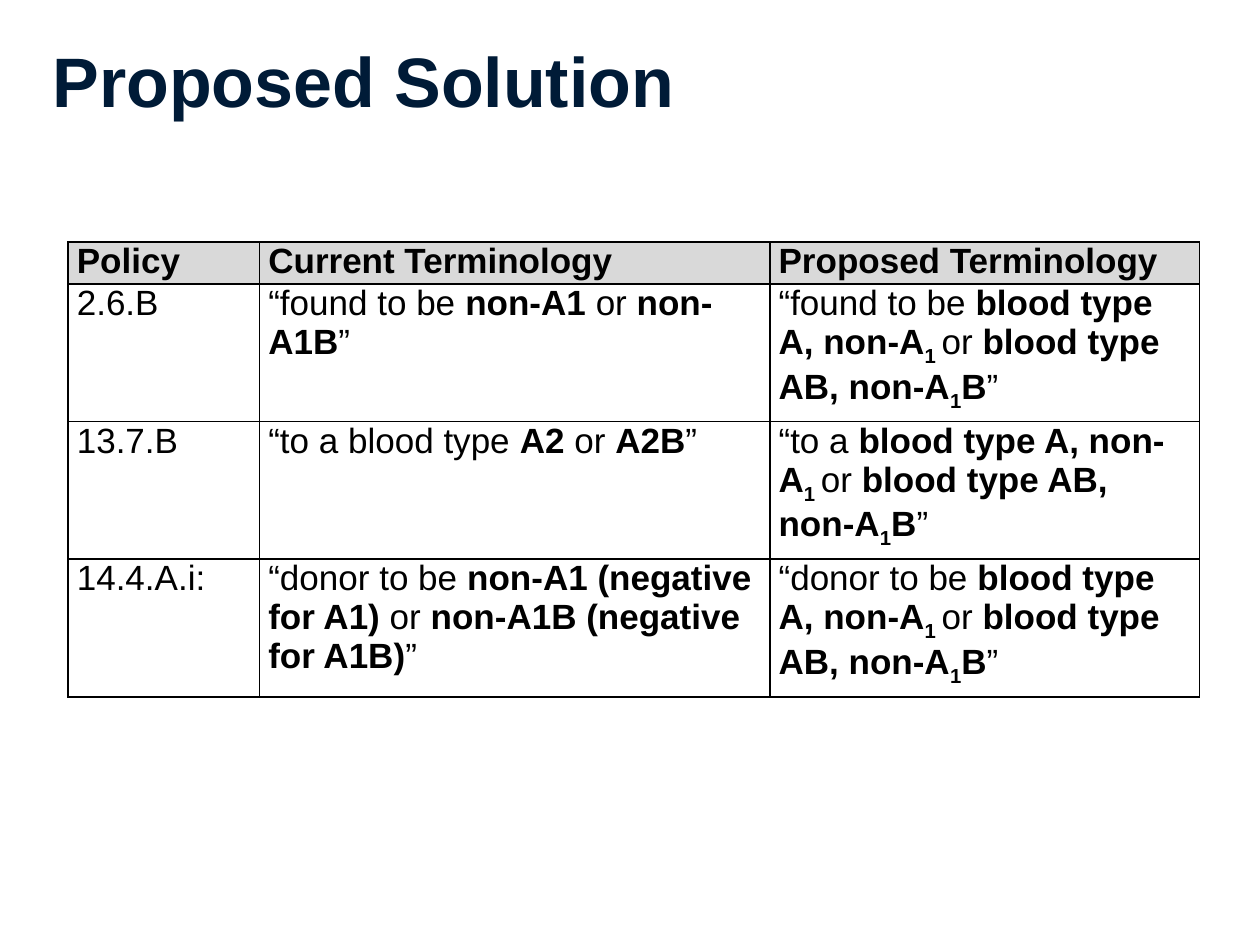
"""Build the Proposed Solution slide with its table of policy terms."""
import pptx
import pptx.util
import pptx.dml.color
import pptx.enum.text
import lxml.etree

Inches = pptx.util.Inches
Pt = pptx.util.Pt


def tint(code):
    return pptx.dml.color.RGBColor.from_string(code)


def write(para, text, size, bold, color="000000", sub=False):
    run = para.add_run()
    run.text = text
    font = run.font
    font.name = "Arial"
    font.size = Pt(size)
    font.bold = bold
    font.color.rgb = tint(color)
    if sub:
        run._r.get_or_add_rPr().set("baseline", "-25000")


deck = pptx.Presentation()
deck.slide_width = Inches(10)
deck.slide_height = Inches(7.5)
slide = deck.slides.add_slide(deck.slide_layouts[6])

title = slide.shapes.add_textbox(Inches(0.32), Inches(0.17), Inches(9.56), Inches(0.93))
frame = title.text_frame
frame.word_wrap = True
frame.vertical_anchor = pptx.enum.text.MSO_ANCHOR.MIDDLE
write(frame.paragraphs[0], "Proposed Solution", 40, True, "001B37")

tail = [
    ("blood type A, non-A", "bold"), ("1 ", "sub"), ("or ", "plain"),
    ("blood type AB, non-A", "bold"), ("1", "sub"), ("B", "bold"), ("”", "plain"),
]
terms = [
    ("2.6.B", "“found to be ", "non-A1", " or ", "non-A1B", "“found to be "),
    ("13.7.B", "“to a blood type ", "A2", " or ", "A2B", "“to a "),
    ("14.4.A.i:", "“donor to be ", "non-A1 (negative for A1)", " or ",
     "non-A1B (negative for A1B)", "“donor to be "),
]
rows = [[[(head, "bold")] for head in ("Policy", "Current Terminology", "Proposed Terminology")]]
for policy, start, first, link, second, lead in terms:
    current = [(start, "plain"), (first, "bold"), (link, "plain"), (second, "bold"), ("”", "plain")]
    rows.append([[(policy, "plain")], current, [(lead, "plain")] + tail])

widths = [1.52, 4.05, 3.41]
heights = [0.33, 1, 1, 1]
table = slide.shapes.add_table(
    len(rows), len(widths), Inches(0.54), Inches(1.92), Inches(sum(widths)), Inches(sum(heights))
).table
for column, width in zip(table.columns, widths):
    column.width = Inches(width)
for row, height in zip(table.rows, heights):
    row.height = Inches(height)

space = "http://schemas.openxmlformats.org/drawingml/2006/main"
for r, row in enumerate(rows):
    for c, runs in enumerate(row):
        cell = table.cell(r, c)
        cell.margin_left = cell.margin_right = Inches(0.07)
        cell.margin_top = cell.margin_bottom = 0
        props = cell._tc.get_or_add_tcPr()
        for side in ("lnL", "lnR", "lnT", "lnB"):
            props.append(lxml.etree.fromstring(
                f'<a:{side} xmlns:a="{space}" w="12700"><a:solidFill>'
                f'<a:srgbClr val="000000"/></a:solidFill></a:{side}>'
            ))
        if r == 0:
            cell.fill.solid()
            cell.fill.fore_color.rgb = tint("D9D9D9")
        else:
            cell.fill.background()
        para = cell.text_frame.paragraphs[0]
        para.space_after = Pt(6)
        for text, style in runs:
            write(para, text, 20, style != "plain", sub=style == "sub")

deck.save("out.pptx")
